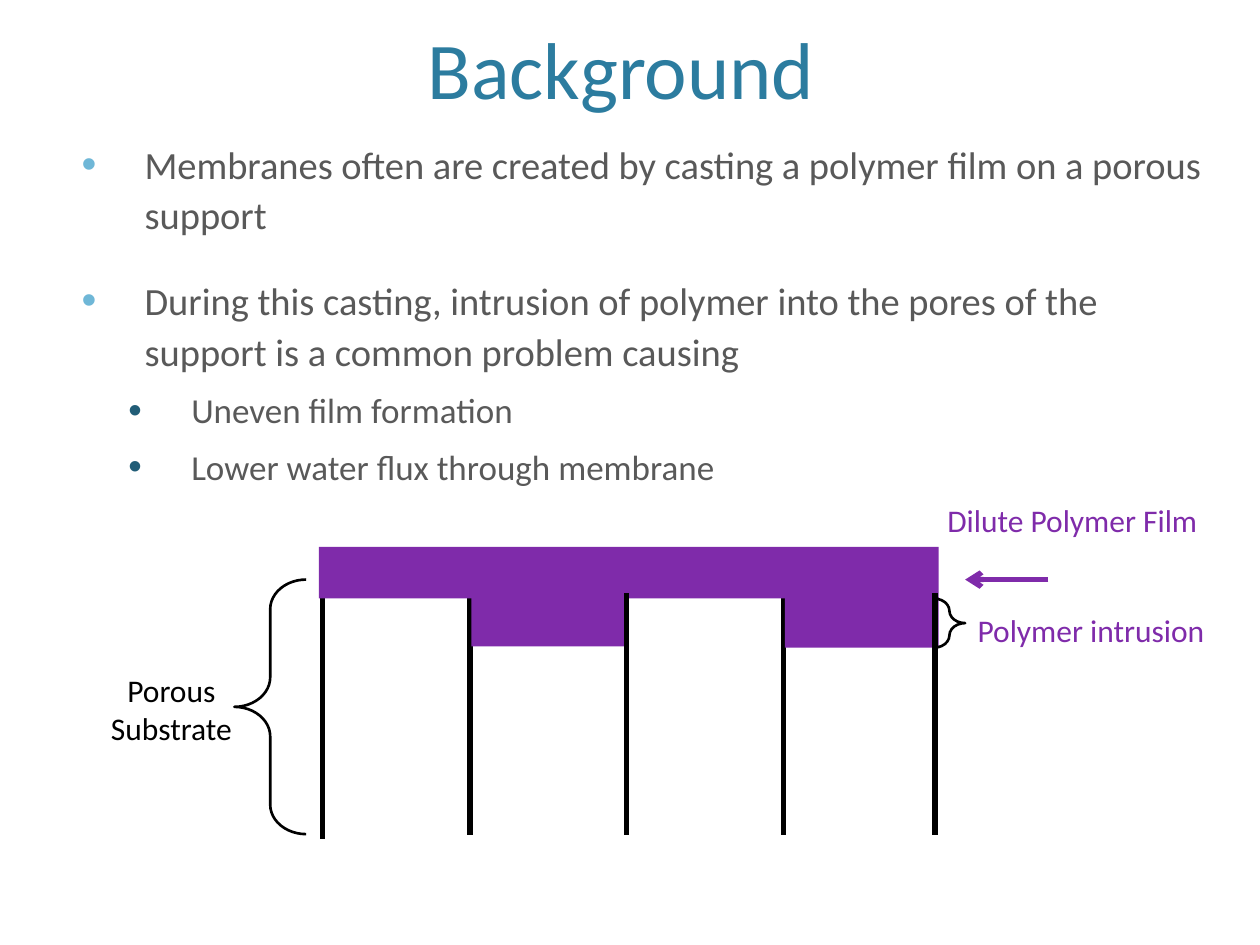
import pptx
import pptx.dml.color
import pptx.enum.shapes
import pptx.enum.text
import pptx.oxml
import pptx.oxml.ns
import pptx.util
from pptx.util import Inches

PURPLE, BLACK, GREY = "7F2BAA", "000000", "595959"
SHAPES = pptx.enum.shapes.MSO_SHAPE
ALIGN = pptx.enum.text.PP_ALIGN
ANCHOR = pptx.enum.text.MSO_ANCHOR


def colour(value):
    return pptx.dml.color.RGBColor.from_string(value)


def add_xml(parent, tag, **attributes):
    """Append an empty drawing element with the given attributes."""
    element = pptx.oxml.parse_xml(f"<a:{tag} {pptx.oxml.ns.nsdecls('a')}/>")
    for name, value in attributes.items():
        element.set(name, value)
    parent.append(element)
    return element


class Painter:
    font = "Calibri"

    def __init__(self, slide):
        self.slide = slide

    def style(self, para, size, ink):
        for span in para.runs:
            span.font.name = self.font
            span.font.size = pptx.util.Pt(size)
            span.font.color.rgb = colour(ink)

    def text(self, left, top, width, height, words, size, ink,
             align=ALIGN.LEFT, anchor=ANCHOR.TOP, wrap=True):
        box = self.slide.shapes.add_textbox(
            Inches(left), Inches(top), Inches(width), Inches(height))
        frame = box.text_frame
        frame.text = words
        frame.word_wrap = wrap
        frame.vertical_anchor = anchor
        for para in frame.paragraphs:
            para.alignment = align
            self.style(para, size, ink)
        return frame

    def bullet(self, para, level, size, before, indent, dot):
        para.level = level
        para.line_spacing = 1.1
        para.space_before = pptx.util.Pt(before)
        self.style(para, size, GREY)
        properties = para._p.get_or_add_pPr()
        properties.set("marL", str(Inches(indent)))
        properties.set("indent", str(Inches(-0.5)))
        add_xml(add_xml(properties, "buClr"), "srgbClr", val=dot)
        add_xml(properties, "buSzPct", val="110000")
        add_xml(properties, "buFont", typeface="Arial")
        add_xml(properties, "buChar", char="•")

    def line(self, x1, y1, x2, y2, ink, arrow=False):
        line = self.slide.shapes.add_connector(
            pptx.enum.shapes.MSO_CONNECTOR.STRAIGHT,
            Inches(x1), Inches(y1), Inches(x2), Inches(y2))
        line.line.color.rgb = colour(ink)
        line.line.width = pptx.util.Pt(3)
        if arrow:
            add_xml(line.line._get_or_add_ln(), "tailEnd", type="arrow")
        add_xml(line._element.spPr, "effectLst")

    def shape(self, kind, left, top, width, height):
        shape = self.slide.shapes.add_shape(
            kind, Inches(left), Inches(top), Inches(width), Inches(height))
        shape.shadow.inherit = False
        return shape

    def block(self, left, top, width, height):
        block = self.shape(SHAPES.RECTANGLE, left, top, width, height)
        block.fill.solid()
        block.fill.fore_color.rgb = colour(PURPLE)
        block.line.fill.background()

    def brace(self, left, top, width, height, rotation=0):
        brace = self.shape(SHAPES.LEFT_BRACE, left, top, width, height)
        brace.adjustments[0] = 0.412
        brace.rotation = rotation
        brace.fill.background()
        brace.line.color.rgb = colour(BLACK)
        brace.line.width = pptx.util.Pt(1.5)


def main():
    deck = pptx.Presentation()
    deck.slide_width, deck.slide_height = Inches(10), Inches(7.5)
    page = Painter(deck.slides.add_slide(deck.slide_layouts[6]))

    # Title and bullets
    page.text(0.6, 0.12, 8.8, 0.85, "Background ", 46, "2C7C9F",
              ALIGN.CENTER, ANCHOR.BOTTOM)
    points = [
        (0, "Membranes often are created by casting a polymer film on a porous support"),
        (0, "During this casting, intrusion of polymer into the pores of the "
            "support is a common problem causing"),
        (1, "Uneven film formation"),
        (1, "Lower water flux through membrane"),
    ]
    # Size, space before, indent and bullet colour of each level
    levels = [(22, 20, 0.5, "6FB7D7"), (20, 6, 0.87, "215D77")]
    body = page.text(0.55, 1.03, 9.16, 2.53,
                     "\n".join(words for _, words in points), 22, GREY)
    for para, (level, _) in zip(body.paragraphs, points):
        page.bullet(para, level, *levels[level])

    # Pore walls behind the polymer
    wall_top, wall_bottom = 4.71, 6.63
    page.line(2.56, wall_top, 2.56, 6.66, BLACK)
    for x in (3.73, 6.22):
        page.line(x, wall_top, x, wall_bottom, BLACK)

    # Polymer film and its intrusions
    page.block(2.53, 4.34, 4.92, 0.41)
    page.block(3.74, 4.72, 1.22, 0.41)
    page.block(6.23, 4.74, 1.22, 0.4)

    # Pore walls in front of the polymer
    for x in (4.97, 7.42):
        page.line(x, wall_top, x, wall_bottom, BLACK)

    # Labels, braces and arrow
    page.text(7.42, 3.93, 2.56, 0.4, "Dilute Polymer Film", 18, PURPLE, wrap=False)
    page.line(8.32, 4.6, 7.66, 4.6, PURPLE, arrow=True)
    page.text(0.5, 5.28, 1.72, 0.71, "Porous Substrate", 18, BLACK, ALIGN.CENTER)
    page.brace(1.86, 4.6, 0.57, 2.02)
    page.text(7.66, 4.8, 2.05, 0.71, "Polymer intrusion", 18, PURPLE)
    page.brace(7.41, 4.75, 0.25, 0.39, rotation=180)

    deck.save("out.pptx")


if __name__ == "__main__":
    main()
